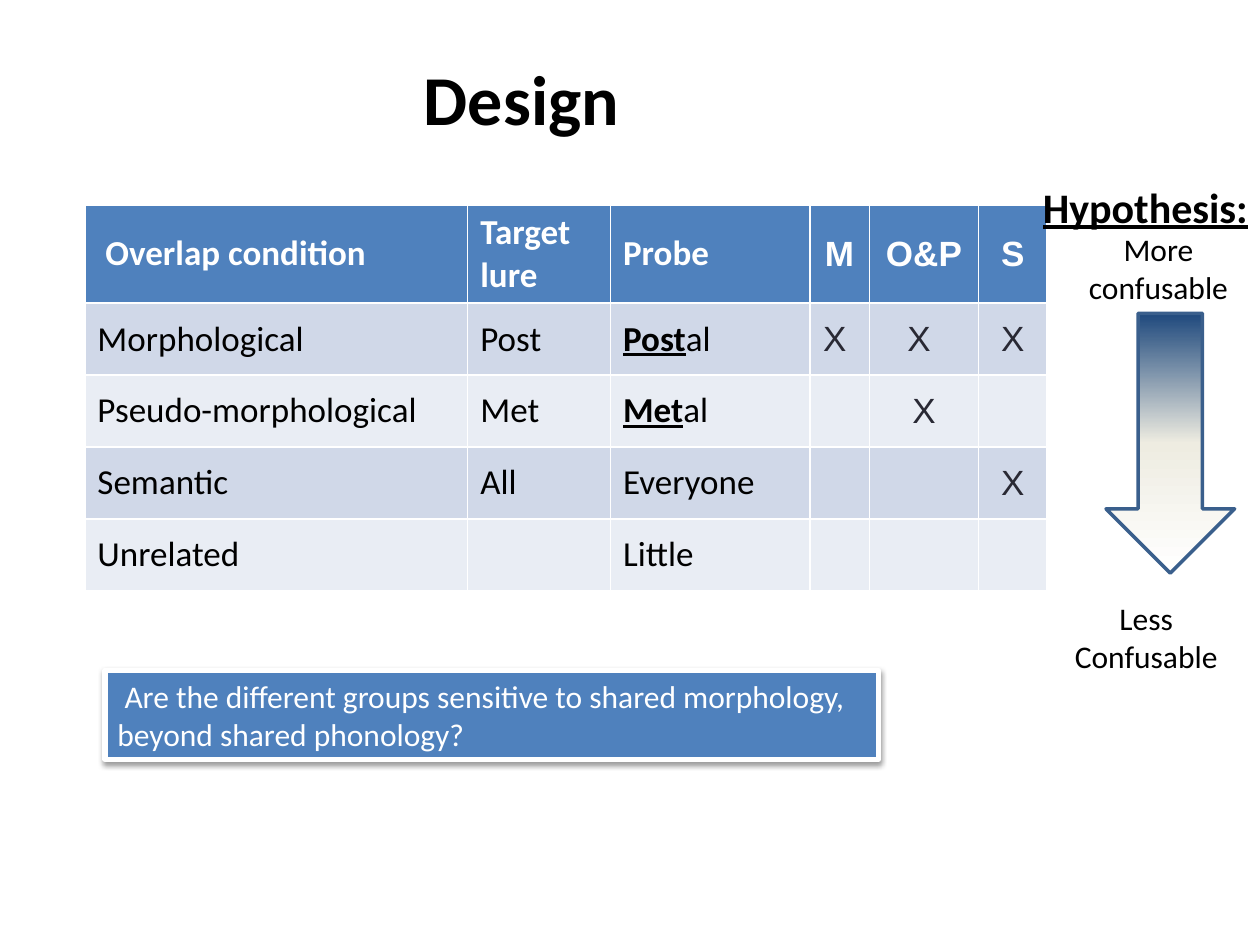
from lxml.etree import fromstring
from pptx import Presentation
from pptx.dml.color import RGBColor
from pptx.enum.shapes import MSO_SHAPE
from pptx.enum.text import MSO_ANCHOR, PP_ALIGN
from pptx.oxml.ns import nsdecls
from pptx.util import Pt

BLACK, WHITE, BLUE, MARK = "000000", "FFFFFF", "4F81BD", "292934"
BANDS = ["D0D8E8", "E9EDF4"]


def rgb(color):
    return RGBColor.from_string(color)


class Deck:
    font = "Calibri"

    def __init__(self):
        self.prs = Presentation()
        self.prs.slide_width, self.prs.slide_height = Pt(720), Pt(540)
        self.s = self.prs.slides.add_slide(self.prs.slide_layouts[5])

    def fill_paragraph(self, p, text, size, color=BLACK, align=PP_ALIGN.CENTER,
                       bold=False, underline=False, font=None):
        """Fill a paragraph; text may be a list of (text, emphasised) parts."""
        p.alignment = align
        f = p.font
        f.name, f.size, f.color.rgb = font or self.font, Pt(size), rgb(color)
        f.bold, f.underline = bold, underline
        parts = [(text, False)] if isinstance(text, str) else text
        for part, strong in parts:
            r = p.add_run()
            r.text = part
            if strong:
                r.font.bold = r.font.underline = True

    def title(self, text, box):
        sp = self.s.shapes.title
        sp.left, sp.top, sp.width, sp.height = map(Pt, box)
        sp.text_frame.vertical_anchor = MSO_ANCHOR.TOP
        self.fill_paragraph(sp.text_frame.paragraphs[0], text, 40, bold=True)

    def label(self, text, box, size=18, **style):
        tf = self.s.shapes.add_textbox(*map(Pt, box)).text_frame
        tf.word_wrap = True
        self.fill_paragraph(tf.paragraphs[0], text, size, **style)

    def shape(self, kind, box, line, width):
        sp = self.s.shapes.add_shape(kind, *map(Pt, box))
        sp.shadow.inherit = False
        sp.line.color.rgb, sp.line.width = rgb(line), Pt(width)
        return sp

    def gradient_arrow(self, box, colors, line):
        sp = self.shape(MSO_SHAPE.DOWN_ARROW, box, line, 2)
        sp.fill.gradient()
        sp.fill.gradient_angle = 270
        stops = sp._element.spPr.find("{*}gradFill/{*}gsLst")
        for gs in list(stops):
            stops.remove(gs)
        step = 100000 // (len(colors) - 1)
        for i, color in enumerate(colors):
            stops.append(fromstring(
                f'<a:gs {nsdecls("a")} pos="{i * step}"><a:srgbClr val="{color}"/></a:gs>'))

    def callout(self, text, box):
        sp = self.shape(MSO_SHAPE.RECTANGLE, box, WHITE, 3)
        sp.fill.solid()
        sp.fill.fore_color.rgb = rgb(BLUE)
        effects = sp._element.spPr.find("{*}effectLst")
        effects.append(fromstring(
            f'<a:outerShdw {nsdecls("a")} blurRad="{Pt(3.1)}" dist="{Pt(1.6)}" dir="5400000" '
            f'rotWithShape="0"><a:srgbClr val="{BLACK}"><a:alpha val="38000"/></a:srgbClr>'
            '</a:outerShdw>'))
        sp.text_frame.word_wrap = True
        self.fill_paragraph(sp.text_frame.paragraphs[0], text, 18, WHITE, PP_ALIGN.LEFT)

    def table(self, rows, left, top, widths, heights, text_columns):
        """Draw a header row and banded rows; columns after text_columns hold marks."""
        table = self.s.shapes.add_table(len(rows), len(widths), Pt(left), Pt(top),
                                        Pt(sum(widths)), Pt(sum(heights))).table
        for col, width in zip(table.columns, widths):
            col.width = Pt(width)
        for i, (row, height) in enumerate(zip(rows, heights)):
            table.rows[i].height = Pt(height)
            header = i == 0
            for j, text in enumerate(row):
                cell = table.cell(i, j)
                cell.vertical_anchor = MSO_ANCHOR.MIDDLE
                cell.fill.solid()
                cell.fill.fore_color.rgb = rgb(BLUE if header else BANDS[(i - 1) % 2])
                if not text:
                    continue
                is_mark = j >= text_columns
                color = WHITE if header else MARK if is_mark else BLACK
                self.fill_paragraph(cell.text_frame.paragraphs[0], text, 20, color,
                                    PP_ALIGN.CENTER if is_mark else PP_ALIGN.LEFT,
                                    bold=header, font="Arial" if is_mark else None)


def main():
    deck = Deck()
    deck.table(
        [[" Overlap condition", "Target lure", "Probe", "M", "O&P", "S"],
         ["Morphological", "Post", [("Post", True), ("al", False)], "X ", "X ", "X"],
         ["Pseudo-morphological", "Met", [("Met", True), ("al", False)], "", "X", ""],
         ["Semantic", "All", "Everyone", "", "", "X"],
         ["Unrelated", "", "Little", "", "", ""]],
        48.5, 117, [218.8, 81.6, 113.9, 34, 62.5, 39], [56] + [41.1] * 4, text_columns=3)
    deck.title("Design", (30, 28, 536, 83))
    deck.gradient_arrow((632, 179, 73.5, 148.5), ["1F497D", "EEECE1", WHITE], "3A5F8C")
    deck.label("More confusable", (604, 128, 116, 51))
    deck.label("Less Confusable", (604, 339, 102, 51))
    deck.label("Hypothesis:", (569.5, 100, 170, 36), 24, bold=True, underline=True)
    deck.callout(" Are the different groups sensitive to shared morphology, "
                 "beyond shared phonology?", (60, 383, 442, 51))
    deck.prs.save("out.pptx")


if __name__ == "__main__":
    main()
